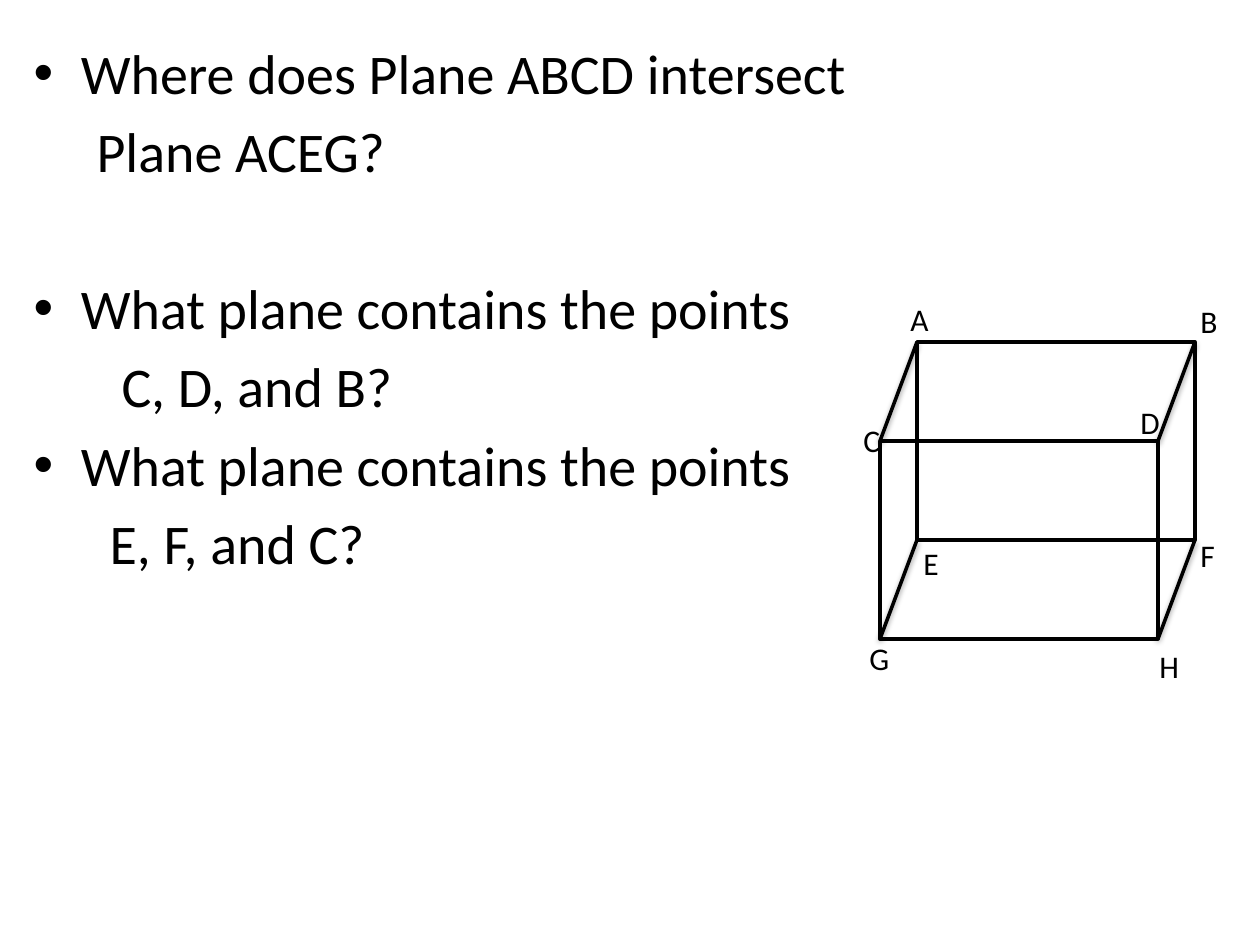
from dataclasses import dataclass
from itertools import product

from lxml.etree import SubElement
from pptx import Presentation
from pptx.dml.color import RGBColor
from pptx.enum.shapes import MSO_CONNECTOR, MSO_SHAPE
from pptx.enum.text import MSO_AUTO_SIZE
from pptx.oxml.ns import qn
from pptx.util import Emu, Pt


@dataclass(frozen=True)
class Theme:
    font: str = "Calibri"
    ink: RGBColor = RGBColor(0, 0, 0)
    paper: RGBColor = RGBColor(255, 255, 255)
    body: int = 32
    label: int = 18
    line: int = 2


THEME = Theme()


def px(n):
    return Emu(round(n * 914400 / 126))


def write(p, text, size, before=None, indent=None):
    r = p.add_run()
    r.text = text
    r.font.name = THEME.font
    r.font.size = Pt(size)
    r.font.color.rgb = THEME.ink
    if before is not None:
        p.space_before = Pt(before)
    if indent is not None:
        pPr = p._p.get_or_add_pPr()
        pPr.set("marL", str(px(indent)))
        pPr.set("indent", "0")
        SubElement(pPr, qn("a:buNone"))


class Board:
    def __init__(self, s, theme):
        self.s = s
        self.theme = theme

    def questions(self, x, y, w, h, items):
        sp = self.s.placeholders[1]
        sp.left, sp.top, sp.width, sp.height = map(px, (x, y, w, h))
        tf = sp.text_frame
        tf.auto_size = MSO_AUTO_SIZE.NONE
        for i, (text, fmt) in enumerate(items):
            p = tf.add_paragraph() if i else tf.paragraphs[0]
            write(p, text, self.theme.body, **fmt)

    def rect(self, x, y, w, h, fill=None):
        sp = self.s.shapes.add_shape(MSO_SHAPE.RECTANGLE, *map(px, (x, y, w, h)))
        sp.shadow.inherit = False
        if fill is None:
            sp.fill.background()
        else:
            sp.fill.solid()
            sp.fill.fore_color.rgb = fill
        self.stroke(sp)

    def edge(self, x1, y1, x2, y2):
        sp = self.s.shapes.add_connector(MSO_CONNECTOR.STRAIGHT, *map(px, (x1, y1, x2, y2)))
        self.stroke(sp)
        effects = SubElement(sp._element.spPr, qn("a:effectLst"))
        shadow = SubElement(effects, qn("a:outerShdw"), blurRad="40000",
                            dist="20000", dir="5400000", rotWithShape="0")
        color = SubElement(shadow, qn("a:srgbClr"), val=str(self.theme.ink))
        SubElement(color, qn("a:alpha"), val="38000")

    def stroke(self, sp):
        sp.line.color.rgb = self.theme.ink
        sp.line.width = Pt(self.theme.line)

    def label(self, text, x, y):
        sp = self.s.shapes.add_textbox(*map(px, (x, y, 40, 42)))
        tf = sp.text_frame
        tf.word_wrap = True
        write(tf.paragraphs[0], text, self.theme.label)


def main():
    prs = Presentation()
    prs.slide_width, prs.slide_height = px(1260), px(945)
    s = prs.slides.add_slide(prs.slide_layouts[1])
    title = s.shapes.title._element
    title.getparent().remove(title)
    board = Board(s, THEME)

    board.questions(21, 32, 888, 936, [
        ("Where does Plane ABCD intersect", {}),
        ("Plane ACEG?", {"indent": 63}),
        ("What plane contains the points", {"before": 51}),
        ("C, D, and B?", {"indent": 88}),
        ("What plane contains the points", {}),
        ("E, F, and C?", {"indent": 76}),
    ])

    x, y, w, h = 880, 441, 278, 198
    dx, dy = 37, -99
    board.rect(x, y, w, h, fill=THEME.paper)
    board.rect(x + dx, y + dy, w, h)
    for cx, cy in product((x, x + w), (y, y + h)):
        board.edge(cx + dx, cy + dy, cx, cy)

    vertices = {
        "A": (898, 294), "B": (1188, 296), "C": (851, 415), "D": (1128, 397),
        "E": (911, 538), "F": (1188, 530), "G": (857, 633), "H": (1147, 641),
    }
    for name, (vx, vy) in vertices.items():
        board.label(name, vx, vy)

    prs.save("out.pptx")


if __name__ == "__main__":
    main()
